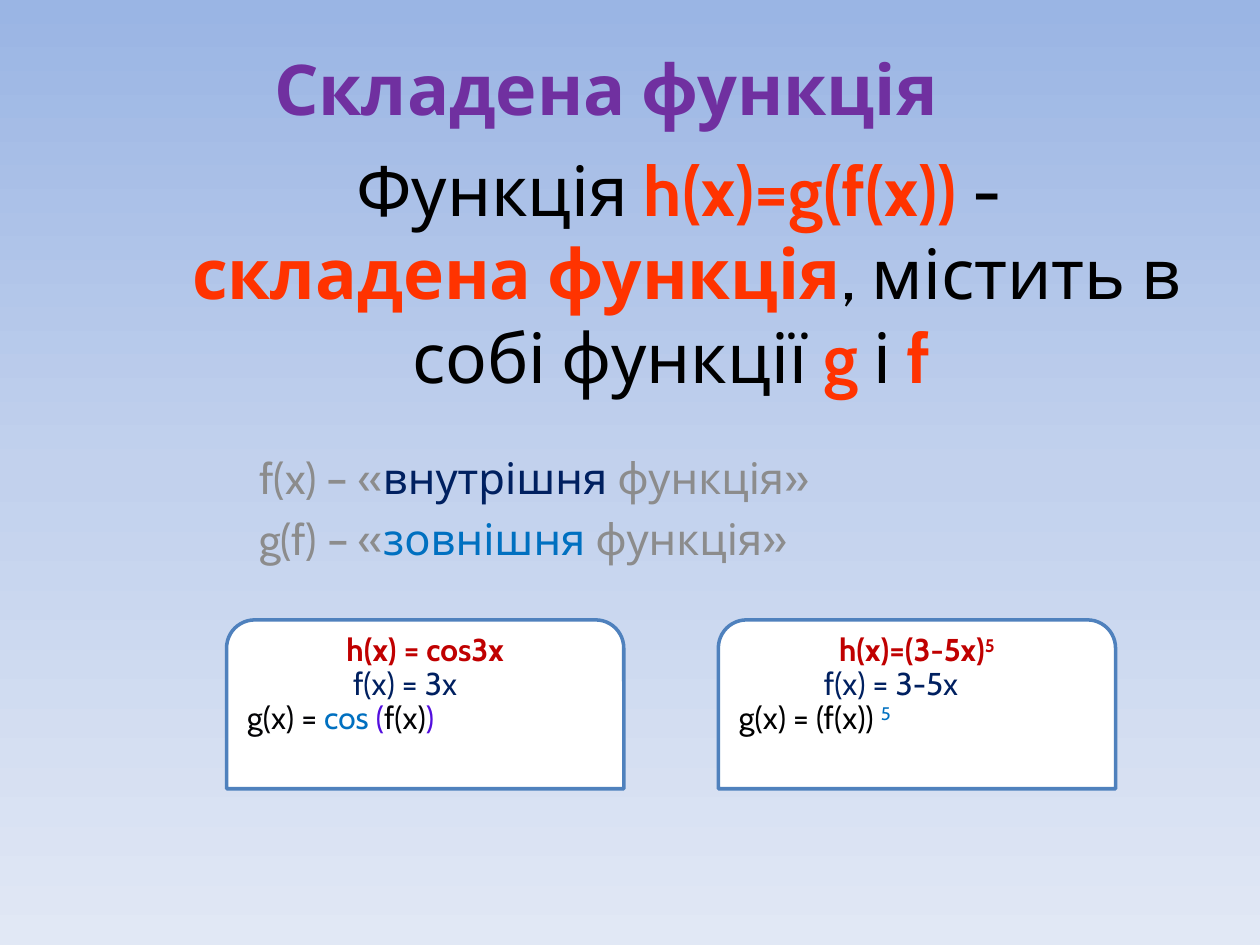
import copy

import pptx
import pptx.dml.color
import pptx.enum.shapes
import pptx.enum.text
import pptx.oxml.ns
import pptx.util

Pt = pptx.util.Pt
ALIGN = pptx.enum.text.PP_ALIGN
ANCHOR = pptx.enum.text.MSO_ANCHOR
HUES = {
    "black": "000000", "white": "FFFFFF", "grey": "8C8C8C", "ink": "030305",
    "red": "FF3300", "dark": "C00000", "navy": "002060", "blue": "0070C0",
    "violet": "530EDE", "purple": "7030A0", "edge": "4F81BD",
    "top": "9AB5E4", "mid": "C2D1ED", "base": "E1E8F5",
}


def color(name):
    return pptx.dml.color.RGBColor.from_string(HUES[name])


def place(shape, box):
    shape.left, shape.top, shape.width, shape.height = map(Pt, box)


def write(para, size, runs, align=ALIGN.LEFT, bold=False):
    """Fill a paragraph from (text, colour, style) runs; style is b or sup."""
    para.alignment = align
    para.font.size, para.font.name, para.font.bold = Pt(size), "Cabin", bold
    for text, hue, *style in runs:
        if text == "\n":
            para.add_line_break()
            continue
        run = para.add_run()
        run.text = text
        run.font.color.rgb = color(hue)
        if "b" in style:
            run.font.bold = True
        if "sup" in style:
            run._r.get_or_add_rPr().set("baseline", "30000")


def paint(slide):
    fill = slide.background.fill
    fill.gradient()
    fill.gradient_angle = 270
    first, last = fill.gradient_stops
    first.color.rgb, first.position = color("top"), 0
    last.color.rgb, last.position = color("mid"), 0.5
    stops = next(slide._element.iter(pptx.oxml.ns.qn("a:gsLst")))
    stops.append(copy.deepcopy(stops[-1]))
    end = fill.gradient_stops[2]
    end.color.rgb, end.position = color("base"), 1


def heading(slide, box):
    shape = slide.shapes.add_textbox(*map(Pt, box))
    frame = shape.text_frame
    frame.word_wrap = True
    write(frame.paragraphs[0], 40, [("Складена функція", "purple")],
          ALIGN.CENTER, True)


def define(shape, box):
    place(shape, box)
    frame = shape.text_frame
    frame.auto_size = pptx.enum.text.MSO_AUTO_SIZE.NONE
    frame.vertical_anchor = ANCHOR.MIDDLE
    write(frame.paragraphs[0], 39.6, [
        ("Функція ", "black"), ("h(x)=g(f(x)) ", "red", "b"),
        ("-", "black"), ("\n", None),
        (" ", "black"), ("складена функція", "red", "b"),
        (", містить в собі функції ", "black"), ("g ", "red", "b"),
        ("і ", "black"), ("f ", "red", "b")], ALIGN.CENTER)


def roles(shape, box):
    place(shape, box)
    frame = shape.text_frame
    frame.auto_size = pptx.enum.text.MSO_AUTO_SIZE.NONE
    frame.vertical_anchor = ANCHOR.TOP
    rows = [("f(x) – «", "внутрішня ", "navy"),
            ("g(f) – «", "зовнішня ", "blue")]
    for i, (start, word, hue) in enumerate(rows):
        para = frame.add_paragraph() if i else frame.paragraphs[0]
        para.space_before = Pt(5 if i else 0)
        write(para, 24.8, [(start, "grey"), (word, hue),
                           ("функція»", "grey")])


def card(slide, box, whole, inner, outer, indent):
    """Rounded card with a function and its two parts, one per line."""
    kind = pptx.enum.shapes.MSO_SHAPE.ROUND_2_SAME_RECTANGLE
    shape = slide.shapes.add_shape(kind, *map(Pt, box))
    shape.shadow.inherit = False
    shape.fill.solid()
    shape.fill.fore_color.rgb = color("white")
    shape.line.color.rgb = color("edge")
    shape.line.width = Pt(2)
    frame = shape.text_frame
    frame.word_wrap = True
    frame.vertical_anchor = ANCHOR.TOP
    for i, runs in enumerate((whole, inner, outer)):
        para = frame.add_paragraph() if i else frame.paragraphs[0]
        para.line_spacing = 0.9
        write(para, 18, runs, ALIGN.LEFT if i else ALIGN.CENTER, i == 0)
    pad = frame.paragraphs[1]._p.get_or_add_pPr()
    pad.set("marL", str(Pt(indent)))
    pad.set("indent", "0")


def main():
    deck = pptx.Presentation()
    deck.slide_width, deck.slide_height = Pt(720), Pt(540)
    slide = deck.slides.add_slide(deck.slide_layouts[0])
    paint(slide)
    define(slide.shapes.title, (82, 20, 612, 271))
    roles(slide.placeholders[1], (141, 254, 504, 72))
    cards = [
        ([("h(x) = cos3x", "dark")], [("f(x) = 3x", "navy")],
         [("g(x) = ", "ink"), ("cos ", "blue"), ("(", "violet"),
          ("f(x)", "ink"), (")", "violet")], 60.5),
        ([("h(x)=(3-5x)", "dark"), ("5", "dark", "sup")],
         [("f(x) = 3-5x", "navy")],
         [("g(x) = (f(x)) ", "black"), ("5", "blue", "sup")], 48.5),
    ]
    for i, parts in enumerate(cards):
        card(slide, (129.5 + 281 * i, 354.25, 227, 96.5), *parts)
    heading(slide, (129.5, 22.5, 433.5, 55.5))
    deck.save("out.pptx")


if __name__ == "__main__":
    main()
